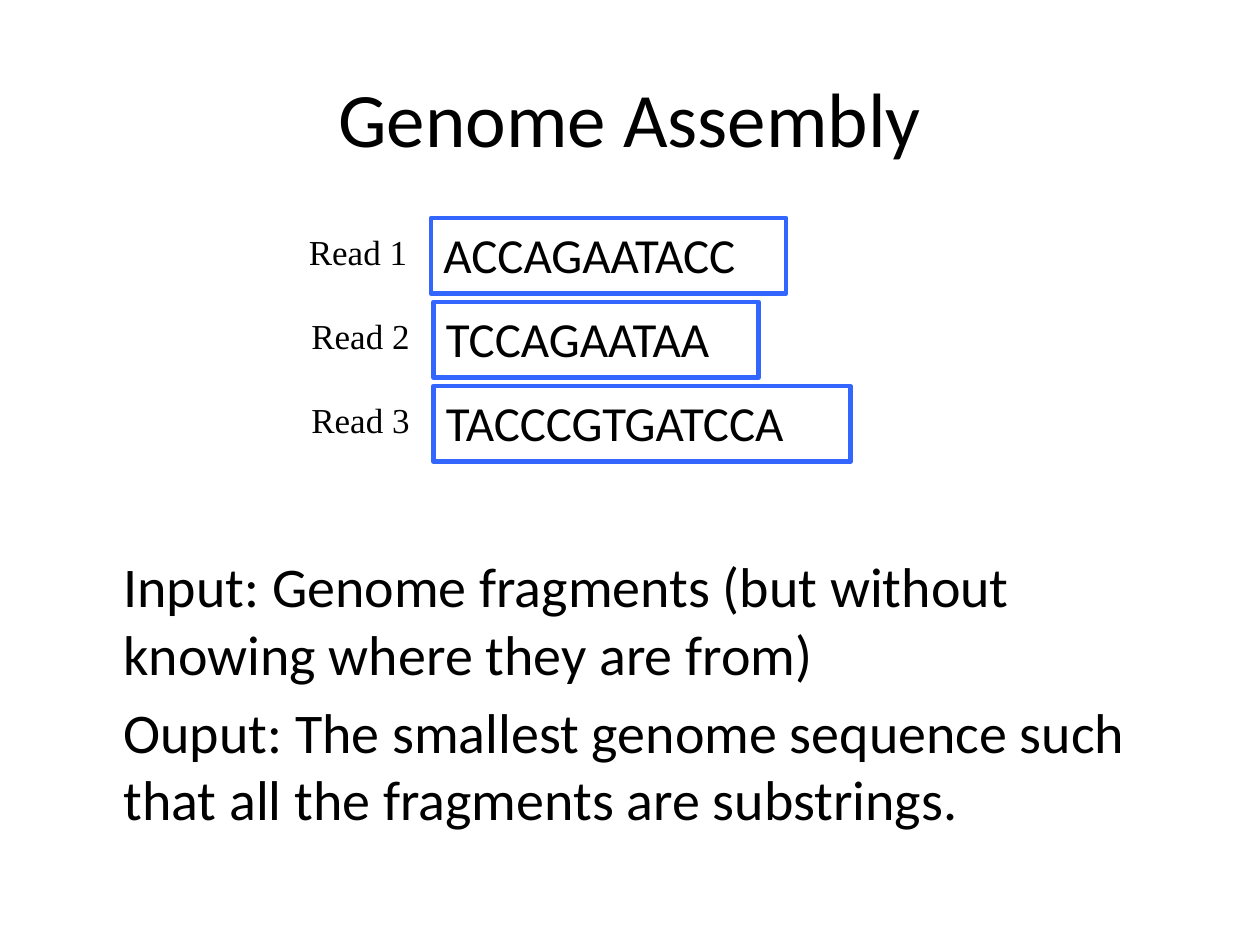
from pptx import Presentation
from pptx.dml.color import RGBColor
from pptx.enum.shapes import MSO_SHAPE
from pptx.enum.text import MSO_ANCHOR, MSO_AUTO_SIZE, PP_ALIGN
from pptx.oxml.ns import qn
from pptx.util import Inches, Pt

RECTANGLE = MSO_SHAPE.RECTANGLE
TOP, MIDDLE = MSO_ANCHOR.TOP, MSO_ANCHOR.MIDDLE
NO_FIT, GROW = MSO_AUTO_SIZE.NONE, MSO_AUTO_SIZE.SHAPE_TO_FIT_TEXT
LEFT, CENTER, RIGHT = PP_ALIGN.LEFT, PP_ALIGN.CENTER, PP_ALIGN.RIGHT

COLORS = {"text": "000000", "box": "3366FF"}
SANS, SERIF = "Calibri", "Times New Roman"

# Label, sequence, left edge and width of each box
READS = [
    ("Read 1", "ACCAGAATACC", 3.42, 2.82),
    ("Read 2", "TCCAGAATAA", 3.44, 2.58),
    ("Read 3", "TACCCGTGATCCA", 3.44, 3.31),
]
FIRST_READ_TOP, READ_STEP = 1.73, 0.667
LABEL_OFFSET = 1.07

STATEMENTS = [
    "Input: Genome fragments (but without knowing where they are from)",
    "Ouput: The smallest genome sequence such that all the fragments are substrings.",
]


def place(shape, left, top, width, height):
    shape.left, shape.top = Inches(left), Inches(top)
    shape.width, shape.height = Inches(width), Inches(height)


def add_text(paragraph, text, size, font, alignment):
    paragraph.alignment = alignment
    run = paragraph.add_run()
    run.text = text
    run.font.size = Pt(size)
    run.font.name = font
    run.font.color.rgb = RGBColor.from_string(COLORS["text"])


def fill_title(title):
    place(title, 0.5, 0.3, 9, 1.25)
    title.text_frame.vertical_anchor = MIDDLE
    add_text(title.text_frame.paragraphs[0], "Genome Assembly", 44, SANS, CENTER)


def fill_body(body):
    place(body, 0.5, 4.33, 9, 2.37)
    frame = body.text_frame
    frame.auto_size = NO_FIT
    for index, statement in enumerate(STATEMENTS):
        paragraph = frame.add_paragraph() if index else frame.paragraphs[0]
        # Indented block without a bullet
        properties = paragraph._p.get_or_add_pPr()
        properties.set("marL", str(Inches(0.38)))
        properties.set("indent", "0")
        properties.append(properties.makeelement(qn("a:buNone"), {}))
        paragraph.space_before = Pt(6.4 if index else 0)
        add_text(paragraph, statement, 32, SANS, LEFT)


def add_sequence_box(slide, sequence, left, top, width):
    box = slide.shapes.add_shape(
        RECTANGLE, Inches(left), Inches(top), Inches(width), Inches(0.6))
    box.shadow.inherit = False
    box.fill.background()
    box.line.color.rgb = RGBColor.from_string(COLORS["box"])
    box.line.width = Pt(2.5)
    box.text_frame.word_wrap = True
    box.text_frame.vertical_anchor = TOP
    add_text(box.text_frame.paragraphs[0], sequence, 28, SANS, LEFT)


def add_label(slide, label, left, top):
    text_box = slide.shapes.add_textbox(
        Inches(left), Inches(top), Inches(0.98), Inches(0.43))
    text_box.text_frame.word_wrap = False
    text_box.text_frame.auto_size = GROW
    add_text(text_box.text_frame.paragraphs[0], label, 20, SERIF, RIGHT)


def main():
    presentation = Presentation()
    presentation.slide_width, presentation.slide_height = Inches(10), Inches(7.5)
    slide = presentation.slides.add_slide(presentation.slide_layouts[1])

    # Title and problem statement
    fill_title(slide.shapes.title)
    fill_body(slide.placeholders[1])

    # Reads stacked at equal steps
    for index, (label, sequence, left, width) in enumerate(READS):
        top = FIRST_READ_TOP + index * READ_STEP
        add_sequence_box(slide, sequence, left, top, width)
        add_label(slide, label, left - LABEL_OFFSET, top + 0.05)

    presentation.save("out.pptx")


if __name__ == "__main__":
    main()
